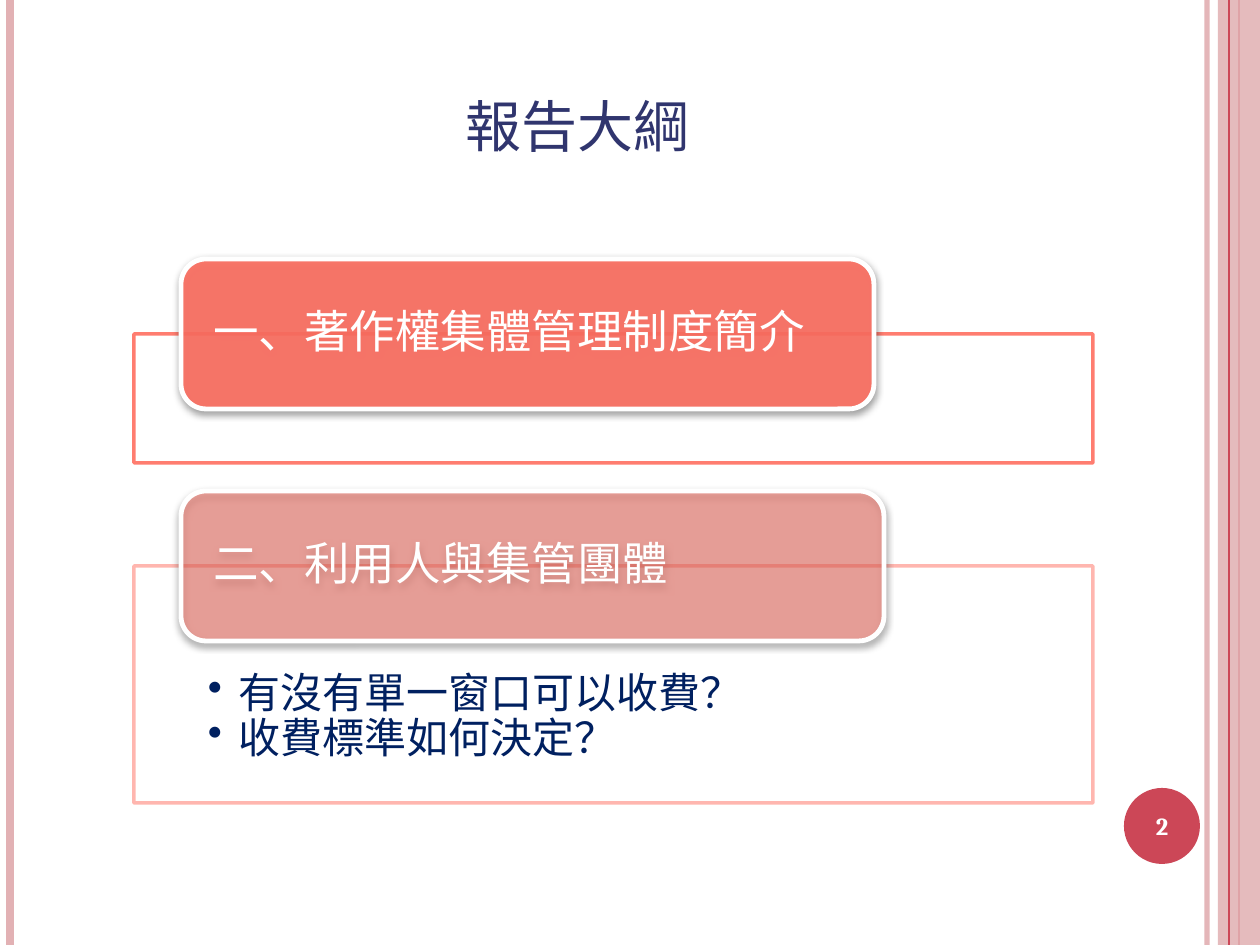
from dataclasses import dataclass
from pptx import Presentation
from pptx.dml.color import RGBColor
from pptx.enum.shapes import MSO_CONNECTOR, MSO_SHAPE
from pptx.enum.text import MSO_ANCHOR, PP_ALIGN
from pptx.oxml import parse_xml
from pptx.oxml.ns import nsdecls, qn
from pptx.oxml.xmlchemy import OxmlElement
from pptx.util import Pt

TITLE = "報告大綱"
# heading, heading width, box top, box height, opacity of fill, of outline, points
PARTS = [
    ("一、著作權集體管理制度簡介", 693, 334, 129, 90, 90, []),
    ("二、利用人與集管團體", 703, 566, 237, 50, 50,
     ["有沒有單一窗口可以收費？", "收費標準如何決定？"]),
]
NUMBER = "2"


@dataclass
class Theme:
    cjk: str = "Noto Sans CJK SC"
    serif: str = "Cambria"
    coral: str = "FF6F61"
    pink: str = "E2B1B4"
    red: str = "CC4757"
    white: str = "FFFFFF"
    indigo: str = "30356E"
    navy: str = "002060"
    title: int = 40
    head: int = 26
    body: int = 24
    small: int = 14


T = Theme()
# x, colour, width in points, opacity
RULES = [(1207, T.pink, 3, 93), (10, T.pink, 4.5, 100), (1239, T.red, 1.5, 100)]
EDGE = (1229, T.red, 0.75, 100)
WIDE, HIGH = 1260, 945
LEFT, SPAN = 134, 959
HEAD_X, HEAD_H, RISE = 181, 150, 75


def px(n):
    return round(n * 914400 / 126)


def fade(spot, pct):
    """Set the opacity of a solid fill inside the given element."""
    if pct < 100:
        tone = spot.find(qn("a:solidFill")).find(qn("a:srgbClr"))
        mark = OxmlElement("a:alpha")
        mark.set("val", str(pct * 1000))
        tone.append(mark)


def stroke(item, color, width, pct=100):
    item.line.color.rgb = RGBColor.from_string(color)
    item.line.width = Pt(width)
    fade(item.element.spPr.find(qn("a:ln")), pct)


def rule(slide, x, color, width, pct):
    line = slide.shapes.add_connector(MSO_CONNECTOR.STRAIGHT, px(x), 0, px(x), px(HIGH))
    stroke(line, color, width, pct)
    line.element.spPr.append(OxmlElement("a:effectLst"))


def block(slide, kind, box, color, pct=100):
    shape = slide.shapes.add_shape(kind, *map(px, box))
    shape.shadow.inherit = False
    shape.fill.solid()
    shape.fill.fore_color.rgb = RGBColor.from_string(color)
    fade(shape.element.spPr, pct)
    shape.line.fill.background()
    return shape


def drop(shape):
    """Add a soft shadow below the shape."""
    spot = shape.element.spPr.find(qn("a:effectLst"))
    spot.append(parse_xml(
        f'<a:outerShdw {nsdecls("a")} blurRad="50800" dist="25400" dir="5400000" '
        'rotWithShape="0"><a:srgbClr val="000000"><a:alpha val="40000"/>'
        '</a:srgbClr></a:outerShdw>'))


def write(shape, lines, size, color, face, align=PP_ALIGN.LEFT,
          anchor=MSO_ANCHOR.MIDDLE, inset=None, bold=False):
    frame = shape.text_frame
    frame.text = "\n".join(lines)
    frame.word_wrap = True
    frame.vertical_anchor = anchor
    if inset:
        (frame.margin_left, frame.margin_top,
         frame.margin_right, frame.margin_bottom) = map(px, inset)
    for para in frame.paragraphs:
        para.alignment = align
        for run in para.runs:
            font = run.font
            font.size, font.bold, font.name = Pt(size), bold, face
            font.color.rgb = RGBColor.from_string(color)
            east = OxmlElement("a:ea")
            east.set("typeface", face)
            run._r.rPr.find(qn("a:latin")).addnext(east)
    return frame.paragraphs


def bullet(para):
    props = para._p.get_or_add_pPr()
    props.set("marL", str(px(31)))
    props.set("indent", str(-px(31)))
    mark = OxmlElement("a:buChar")
    mark.set("char", "•")
    props.append(mark)


def part(slide, head, width, top, height, tint, edge, points):
    box = block(slide, MSO_SHAPE.RECTANGLE, (LEFT, top, SPAN, height), T.white, 90)
    stroke(box, T.coral, 2, edge)
    if points:
        for para in write(box, points, T.body, T.navy, T.cjk,
                          anchor=MSO_ANCHOR.TOP, inset=(74, 106, 74, 24)):
            para.line_spacing = 0.9
            bullet(para)
    tab = block(slide, MSO_SHAPE.ROUNDED_RECTANGLE,
                (HEAD_X, top - RISE, width, HEAD_H), T.coral, tint)
    stroke(tab, T.white, 2.75)
    drop(tab)
    write(tab, [head], T.head, T.white, T.cjk, inset=(25, 0, 25, 0))[0].line_spacing = 0.9


def main():
    deck = Presentation()
    deck.slide_width, deck.slide_height = px(WIDE), px(HIGH)
    slide = deck.slides.add_slide(deck.slide_layouts[5])

    for spec_row in RULES:
        rule(slide, *spec_row)
    block(slide, MSO_SHAPE.RECTANGLE, (1218, 0, 42, HIGH), T.pink, 87)
    rule(slide, *EDGE)

    title = slide.shapes.title
    title.left, title.top, title.width, title.height = map(px, (63, 38, 1029, 130))
    para = write(title, [TITLE], T.title, T.indigo, T.cjk,
                 PP_ALIGN.CENTER, MSO_ANCHOR.BOTTOM)[0]
    para.runs[0]._r.rPr.set("cap", "small")

    for row in PARTS:
        part(slide, *row)

    block(slide, MSO_SHAPE.OVAL, (1124, 788, 76, 76), T.red)
    page = slide.shapes.add_textbox(*map(px, (1120, 790, 84, 72)))
    write(page, [NUMBER], T.small, T.white, T.serif, PP_ALIGN.CENTER, bold=True)

    deck.save("out.pptx")


if __name__ == "__main__":
    main()
